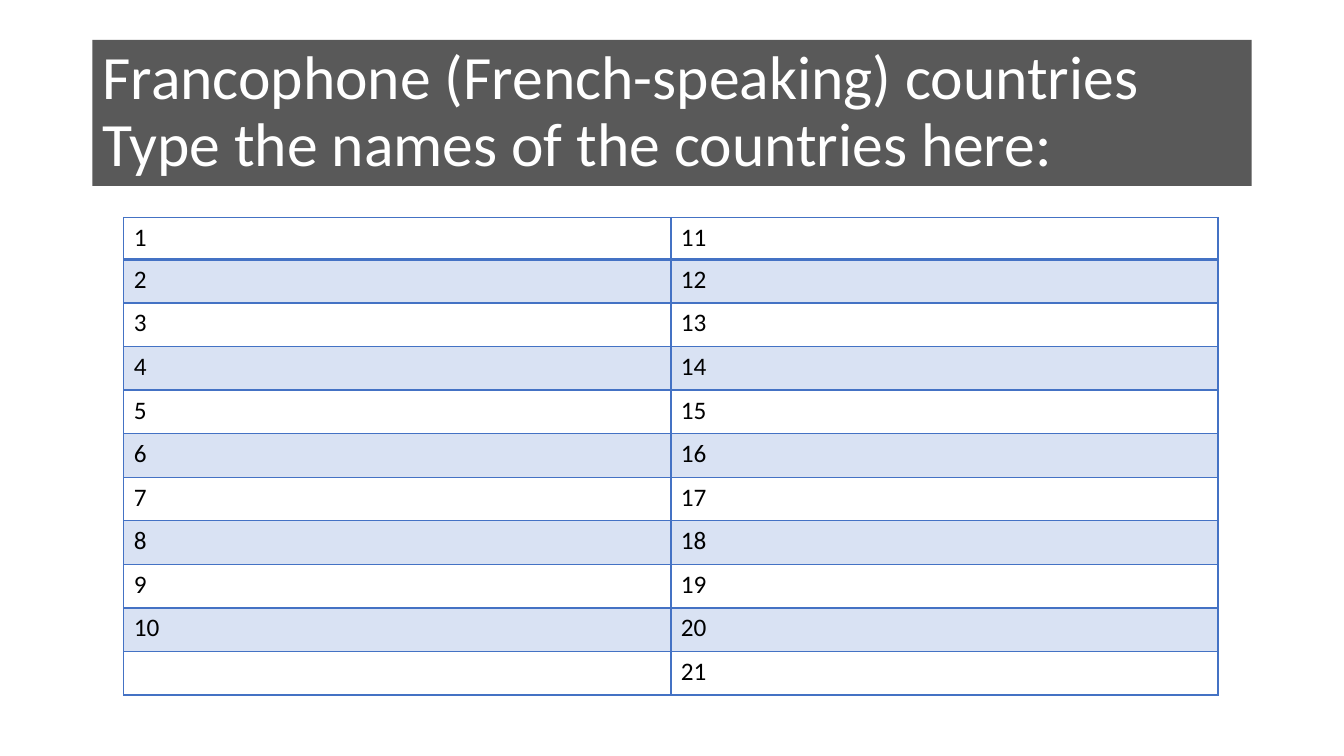
from lxml import etree
from pptx import Presentation
from pptx import util as u
from pptx.dml.color import RGBColor
from pptx.enum import text
from pptx.oxml.ns import qn

PX = 9525
FONT = "Calibri"
WHITE = RGBColor(0xFF, 0xFF, 0xFF)
BLACK = RGBColor(0x00, 0x00, 0x00)
CHARCOAL = RGBColor(0x59, 0x59, 0x59)
BLUE = RGBColor(0x44, 0x72, 0xC4)

HEADING = "Francophone (French-speaking) countries\nType the names of the countries here:"
COUNTRY_COLUMNS = [range(1, 11), range(11, 22)]
ROW_COUNT = 11
FIRST_ROW_HEIGHT = 40
BAND_OPACITY = 20


def scaled(box):
    return [u.Emu(length * PX) for length in box]


def set_font(paragraph, size, color):
    paragraph.font.name = FONT
    paragraph.font.size = u.Pt(size)
    paragraph.font.color.rgb = color


def add_heading(slide, box):
    heading = slide.shapes.title
    heading.left, heading.top, heading.width, heading.height = scaled(box)
    heading.fill.solid()
    heading.fill.fore_color.rgb = CHARCOAL
    frame = heading.text_frame
    frame.word_wrap = True
    frame.auto_size = text.MSO_AUTO_SIZE.NONE
    frame.vertical_anchor = text.MSO_ANCHOR.MIDDLE
    paragraph = frame.paragraphs[0]
    paragraph.text = HEADING
    paragraph.alignment = text.PP_ALIGN.LEFT
    paragraph.line_spacing = 0.9
    set_font(paragraph, 44, WHITE)


def set_borders(cell, widths):
    properties = cell._tc.get_or_add_tcPr()
    for side, width in widths.items():
        line = etree.SubElement(properties, qn(f"a:ln{side}"), w=str(u.Pt(width)))
        fill = etree.SubElement(line, qn("a:solidFill"))
        etree.SubElement(fill, qn("a:srgbClr"), val=str(BLUE))


def fill_band(cell):
    cell.fill.solid()
    cell.fill.fore_color.rgb = BLUE
    color = cell._tc.tcPr.find(".//" + qn("a:solidFill") + "[last()]/../" + qn("a:solidFill") + "/" + qn("a:srgbClr"))
    color = cell._tc.tcPr.findall(qn("a:solidFill"))[0][0]
    etree.SubElement(color, qn("a:alpha"), val=str(BAND_OPACITY * 1000))


def add_country_table(slide, box):
    left, top, width, height = scaled(box)
    column_count = len(COUNTRY_COLUMNS)
    countries = slide.shapes.add_table(ROW_COUNT, column_count, left, top, width, height).table
    countries.first_row = False
    countries.horz_banding = False
    first_height = FIRST_ROW_HEIGHT * PX
    for index, row in enumerate(countries.rows):
        row.height = u.Emu(first_height if index == 0 else (height - first_height) // (ROW_COUNT - 1))
    for column_index, numbers in enumerate(COUNTRY_COLUMNS):
        countries.columns[column_index].width = u.Emu(width // column_count)
        for row_index in range(ROW_COUNT):
            cell = countries.cell(row_index, column_index)
            top_width = 2 if row_index == 1 else 1
            bottom_width = 2 if row_index == 0 else 1
            set_borders(cell, {"L": 1, "R": 1, "T": top_width, "B": bottom_width})
            if row_index % 2:
                fill_band(cell)
            else:
                cell.fill.background()
            paragraph = cell.text_frame.paragraphs[0]
            if row_index < len(numbers):
                paragraph.text = str(numbers[row_index])
            set_font(paragraph, 18, BLACK)


def main():
    deck = Presentation()
    deck.slide_width, deck.slide_height = scaled((1280, 720))
    slide = deck.slides.add_slide(deck.slide_layouts.get_by_name("Title Only"))
    add_heading(slide, (88, 38, 1104, 139))
    add_country_table(slide, (118, 207, 1042, 455))
    deck.save("out.pptx")


if __name__ == "__main__":
    main()
